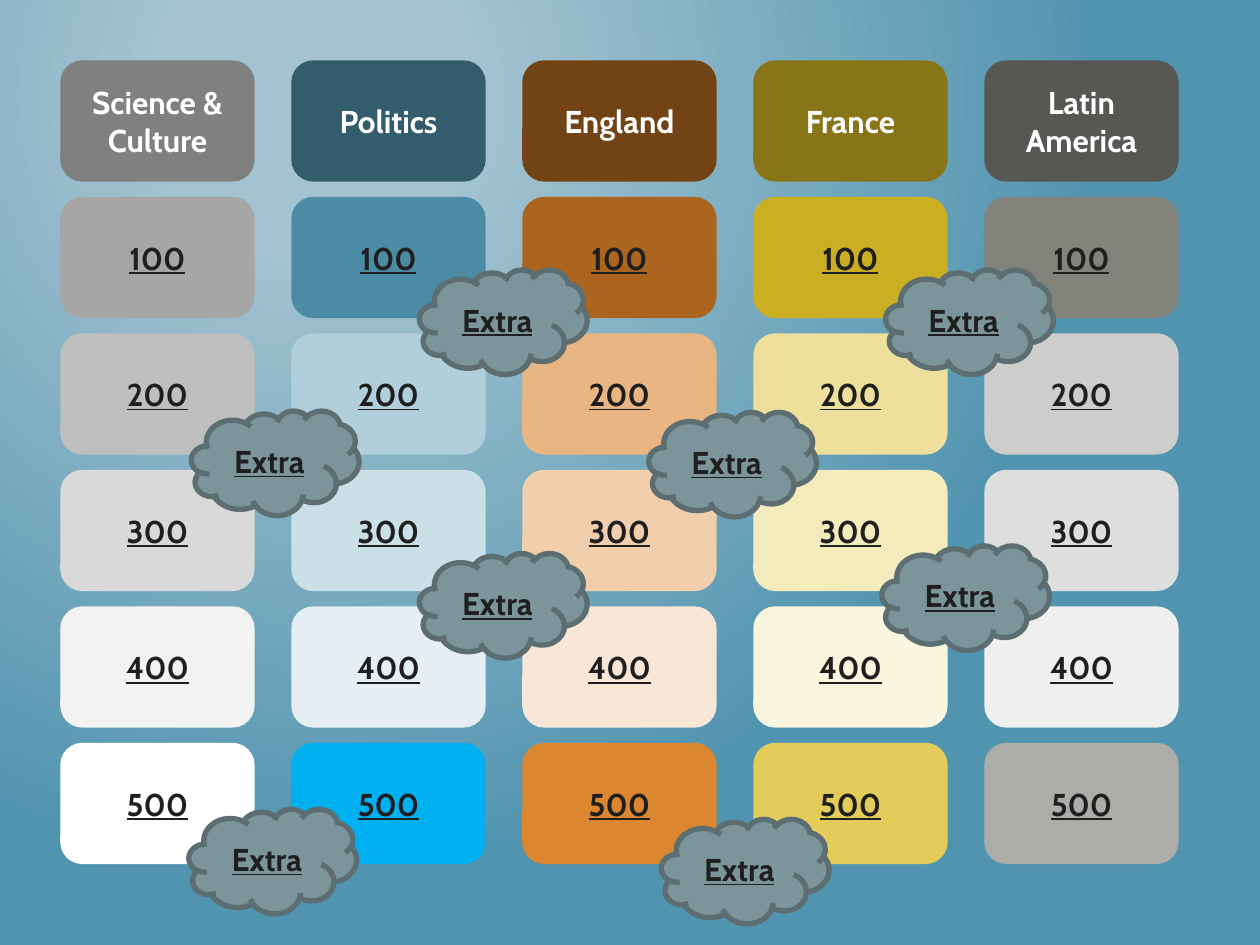
from lxml import etree
from pptx import Presentation
from pptx import util as u
from pptx.dml.color import RGBColor
from pptx.enum import shapes, text
from pptx.oxml import ns

WHITE = RGBColor(0xFF, 0xFF, 0xFF)
INK = RGBColor(0x1F, 0x1F, 0x1F)
SKY_LIGHT = RGBColor(0xA3, 0xC3, 0xD1)
SKY_DARK = RGBColor(0x51, 0x94, 0xAF)
CLOUD_FILL = RGBColor(0x7C, 0x95, 0x9A)
CLOUD_EDGE = RGBColor(0x5C, 0x6E, 0x72)


def shades(codes):
    return [RGBColor.from_string(code) for code in codes.split()]


GREYS = shades("808080 A6A6A6 BFBFBF D9D9D9 F2F2F2 FFFFFF")
BLUES = shades("335D6D 4C8BA4 B1CFDB CBDFE7 E5EFF3 00B0F0")
ORANGES = shades("724314 AB651E E9B683 F1CFAD F8E7D6 DB8631")
YELLOWS = shades("887517 CBAF22 EEE09C F4EBBD F9F5DE E3CC5A")
STONES = shades("575853 82847C CDCECB DEDEDC EEEFEE ACADA8")

CATEGORIES = [
    ("Science & Culture", GREYS),
    ("Politics", BLUES),
    ("England", ORANGES),
    ("France", YELLOWS),
    ("Latin America", STONES),
]
CLOUD_SPOTS = [
    (1.5, 6.42), (7.03, 2.14), (3.33, 2.14), (5.15, 3.27),
    (1.52, 3.26), (7, 4.33), (3.33, 4.39), (5.25, 6.5),
]
MARGIN = 0.5
COLUMN_STEP = 5.5 / 3
ROW_STEP = 3.25 / 3
TILE_SIZE = (1.5, 0.92)
CLOUD_SIZE = (1.33, 0.83)


def paint_background(page):
    fill = page.background.fill
    fill.gradient()
    stops = zip(fill.gradient_stops, (0.2, 1), (SKY_LIGHT, SKY_DARK))
    for stop, position, color in stops:
        stop.position = position
        stop.color.rgb = color
    gradient = page.background.element.find(".//" + ns.qn("a:gradFill"))
    linear = gradient.find(ns.qn("a:lin"))
    circle = etree.Element(ns.qn("a:path"), {"path": "circle"})
    etree.SubElement(circle, ns.qn("a:fillToRect"),
                     {"l": "50000", "t": "20000", "r": "100000", "b": "100000"})
    gradient.replace(linear, circle)


def add_button(page, kind, spot, size, fill, edge, label, color, underline):
    box = page.shapes.add_shape(kind, *(u.Inches(n) for n in (*spot, *size)))
    box.shadow.inherit = False
    box.fill.solid()
    box.fill.fore_color.rgb = fill
    box.line.color.rgb = edge
    box.line.width = u.Pt(3.03)
    frame = box.text_frame
    frame.word_wrap = True
    frame.vertical_anchor = text.MSO_ANCHOR.MIDDLE
    para = frame.paragraphs[0]
    para.alignment = text.PP_ALIGN.CENTER
    span = para.add_run()
    span.text = label
    span.font.name = "Cabin"
    span.font.size = u.Pt(18)
    span.font.bold = True
    span.font.underline = underline
    span.font.color.rgb = color


def add_column(page, column, title, fills):
    for row, fill in enumerate(fills):
        is_header = row == 0
        spot = (MARGIN + column * COLUMN_STEP, MARGIN + row * ROW_STEP)
        add_button(page, shapes.MSO_SHAPE.ROUNDED_RECTANGLE, spot, TILE_SIZE,
                   fill, fill, title if is_header else str(row * 100),
                   WHITE if is_header else INK, not is_header)


def add_cloud(page, spot):
    add_button(page, shapes.MSO_SHAPE.CLOUD, spot, CLOUD_SIZE,
               CLOUD_FILL, CLOUD_EDGE, "Extra", INK, True)


def main():
    """Build a quiz board of five categories with extra question clouds."""
    deck = Presentation()
    deck.slide_width = u.Inches(10)
    deck.slide_height = u.Inches(7.5)
    page = deck.slides.add_slide(deck.slide_layouts[6])
    paint_background(page)
    for column, (title, fills) in enumerate(CATEGORIES):
        add_column(page, column, title, fills)
    for spot in CLOUD_SPOTS:
        add_cloud(page, spot)
    deck.save("out.pptx")


main()
